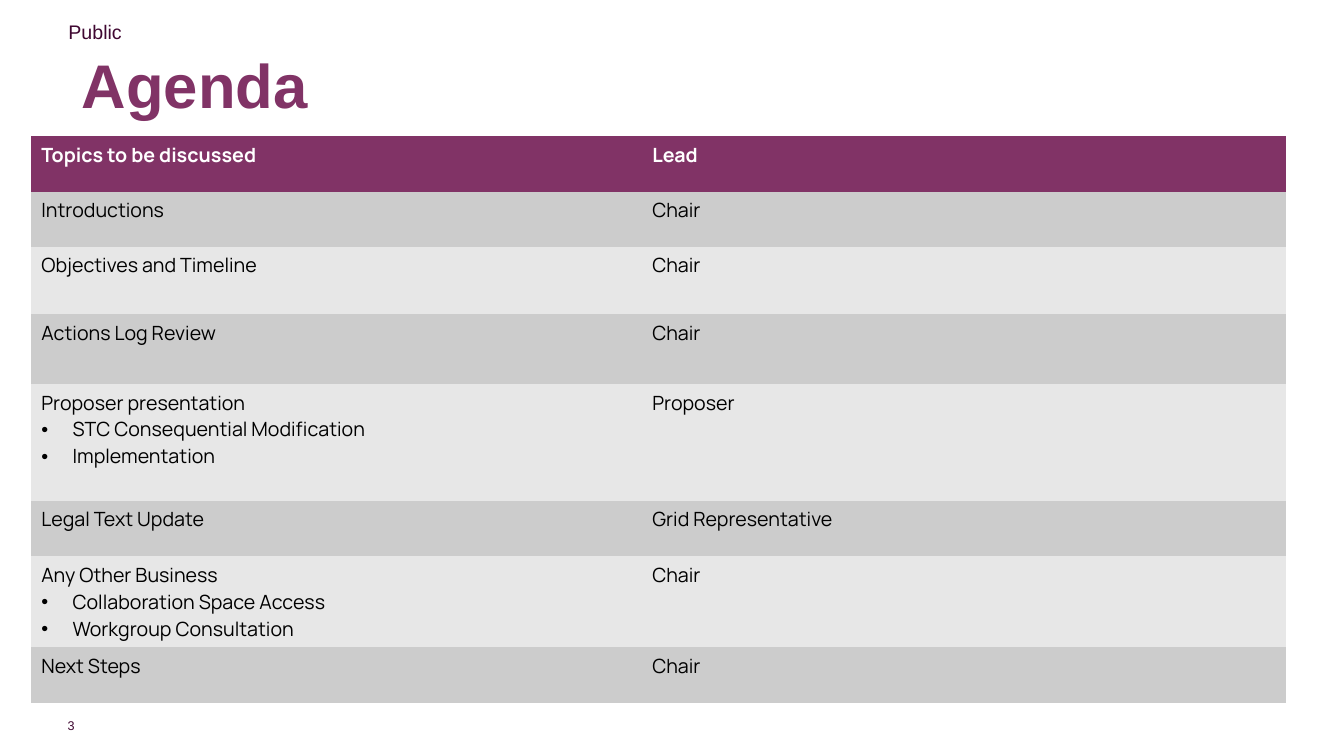
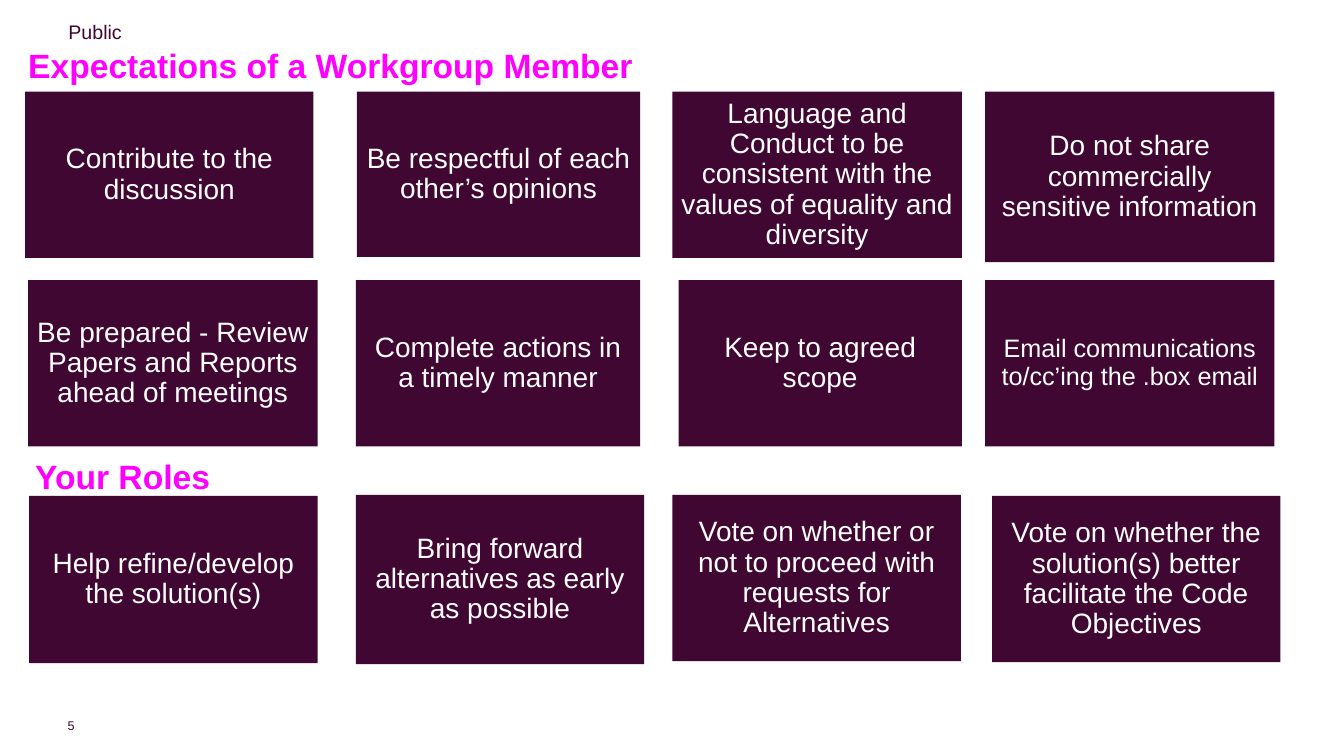
from dataclasses import dataclass

from lxml import etree
from pptx import Presentation
from pptx.dml.color import RGBColor
from pptx.enum.shapes import MSO_SHAPE
from pptx.enum.text import MSO_ANCHOR, MSO_AUTO_SIZE, PP_ALIGN
from pptx.oxml.ns import qn
from pptx.util import Inches, Pt

RECT = MSO_SHAPE.RECTANGLE
TOP, MIDDLE = MSO_ANCHOR.TOP, MSO_ANCHOR.MIDDLE
LEFT, CENTER, RIGHT = PP_ALIGN.LEFT, PP_ALIGN.CENTER, PP_ALIGN.RIGHT
NO_FIT = MSO_AUTO_SIZE.NONE
PLAIN_TABLE = "{2D5ABB26-0587-4C30-8999-92F81FD0307C}"
TITLE_ONLY = 5


@dataclass(frozen=True)
class Theme:
    font: str = "Arial"
    table_font: str = "Manrope"
    dark: str = "3F0731"
    purple: str = "813366"
    magenta: str = "FF00FF"
    white: str = "FFFFFF"
    black: str = "000000"
    bands: tuple = ("CCCCCC", "E7E7E7")
    title: int = 44
    heading: int = 24
    tile: int = 20
    tile_small: int = 18
    body: int = 14
    number: int = 9
    spacing: float = 0.9


T = Theme()

LABEL = "Public"

AGENDA_TITLE = "Agenda"
AGENDA_COLUMNS = (6.06, 6.39)
AGENDA = [
    (0.55, ["Topics to be discussed"], "Lead"),
    (0.55, ["Introductions"], "Chair"),
    (0.67, ["Objectives and Timeline"], "Chair"),
    (0.69, ["Actions Log Review"], "Chair"),
    (1.16, ["Proposer presentation", "STC Consequential Modification", "Implementation"], "Proposer"),
    (0.55, ["Legal Text Update"], "Grid Representative"),
    (0.89, ["Any Other Business", "Collaboration Space Access", "Workgroup Consultation"], "Chair"),
    (0.55, ["Next Steps"], "Chair"),
]

EXPECTATIONS_TITLE = "Expectations of a Workgroup Member"
ROLES_TITLE = "Your Roles"
TILES = [
    ("Contribute to the discussion", (0.25, 0.91, 2.86, 1.65), T.tile),
    ("Be respectful of each other’s opinions", (3.54, 0.91, 2.81, 1.64), T.tile),
    ("Language and Conduct to be consistent with the values of equality and diversity",
     (6.67, 0.91, 2.87, 1.65), T.tile),
    ("Do not share commercially sensitive information", (9.77, 0.91, 2.87, 1.69), T.tile),
    ("Be prepared - Review Papers and Reports ahead of meetings", (0.28, 2.78, 2.87, 1.65), T.tile),
    ("Complete actions in a timely manner", (3.53, 2.78, 2.82, 1.65), T.tile),
    ("Keep to agreed scope", (6.73, 2.78, 2.81, 1.65), T.tile),
    ("Email communications to/cc’ing the .box email", (9.77, 2.78, 2.87, 1.65), T.tile_small),
    ("Help refine/develop the solution(s)", (0.29, 4.92, 2.86, 1.66), T.tile),
    ("Bring forward alternatives as early as possible", (3.53, 4.91, 2.86, 1.68), T.tile),
    ("Vote on whether or not to proceed with requests for Alternatives",
     (6.67, 4.91, 2.86, 1.65), T.tile),
    ("Vote on whether the solution(s) better facilitate the Code Objectives",
     (9.84, 4.92, 2.86, 1.65), T.tile),
]


def box(at):
    return [Inches(v) for v in at]


def style(p, size, color, bold=False, font=T.font):
    for r in p.runs:
        r.font.size = Pt(size)
        r.font.name = font
        r.font.bold = bold
        r.font.color.rgb = RGBColor.from_string(color)


def write(sp, text, size, color, bold=False, align=LEFT, anchor=TOP, inset=None, spacing=None):
    tf = sp.text_frame
    tf.text = text
    tf.word_wrap = True
    tf.auto_size = NO_FIT
    tf.vertical_anchor = anchor
    if inset is not None:
        tf.margin_left = tf.margin_right = tf.margin_top = tf.margin_bottom = Inches(inset)
    p = tf.paragraphs[0]
    p.alignment = align
    if spacing:
        p.line_spacing = spacing
    style(p, size, color, bold)


def add_slide(prs, number, title, at, size, color):
    s = prs.slides.add_slide(prs.slide_layouts[TITLE_ONLY])
    sp = s.shapes.title
    sp.left, sp.top, sp.width, sp.height = box(at)
    write(sp, title, size, color, bold=True, anchor=MIDDLE, spacing=T.spacing)
    label = s.shapes.add_textbox(*box((0.58, 0.15, 5, 0.34)))
    write(label, LABEL, T.body, T.dark)
    page = s.shapes.add_textbox(*box((0.59, 7.12, 0.15, 0.15)))
    write(page, number, T.number, T.dark, align=RIGHT, anchor=MIDDLE, inset=0)
    return s


def add_bullet(p):
    pPr = p._p.get_or_add_pPr()
    pPr.set("marL", str(Inches(0.31)))
    pPr.set("indent", str(-Inches(0.31)))
    etree.SubElement(pPr, qn("a:buFont")).set("typeface", T.font)
    etree.SubElement(pPr, qn("a:buChar")).set("char", "•")


def fill_cell(cell, lines, fill, color, bold):
    cell.fill.solid()
    cell.fill.fore_color.rgb = RGBColor.from_string(fill)
    tf = cell.text_frame
    tf.text = "\n".join(lines)
    for i, p in enumerate(tf.paragraphs):
        if i:
            add_bullet(p)
        style(p, T.body, color, bold, T.table_font)


def add_agenda(s):
    at = (0.31, 1.35, sum(AGENDA_COLUMNS), sum(row[0] for row in AGENDA))
    table = s.shapes.add_table(len(AGENDA), len(AGENDA_COLUMNS), *box(at)).table
    table.horz_banding = False
    table._tbl.tblPr.find(qn("a:tableStyleId")).text = PLAIN_TABLE
    for column, width in zip(table.columns, AGENDA_COLUMNS):
        column.width = Inches(width)
    for i, (height, topics, lead) in enumerate(AGENDA):
        table.rows[i].height = Inches(height)
        header = i == 0
        fill = T.purple if header else T.bands[(i - 1) % 2]
        color = T.white if header else T.black
        for j, lines in enumerate((topics, [lead])):
            fill_cell(table.cell(i, j), lines, fill, color, header)


def add_tile(s, text, at, size):
    sp = s.shapes.add_shape(RECT, *box(at))
    sp.shadow.inherit = False
    sp.fill.solid()
    sp.fill.fore_color.rgb = RGBColor.from_string(T.dark)
    sp.line.fill.background()
    write(sp, text, size, T.white, align=CENTER, anchor=MIDDLE, inset=0.08, spacing=T.spacing)


def main():
    prs = Presentation()
    prs.slide_width, prs.slide_height = Inches(13.33), Inches(7.5)

    s = add_slide(prs, "3", AGENDA_TITLE, (0.71, 0.4, 10.61, 0.95), T.title, T.purple)
    add_agenda(s)

    s = add_slide(prs, "5", EXPECTATIONS_TITLE, (0.18, 0.2, 10.62, 0.95), T.heading, T.magenta)
    roles = s.shapes.add_textbox(*box((0.25, 4.52, 10.62, 0.51)))
    write(roles, ROLES_TITLE, T.heading, T.magenta, bold=True, spacing=T.spacing)
    for text, at, size in TILES:
        add_tile(s, text, at, size)

    prs.save("out.pptx")


if __name__ == "__main__":
    main()
